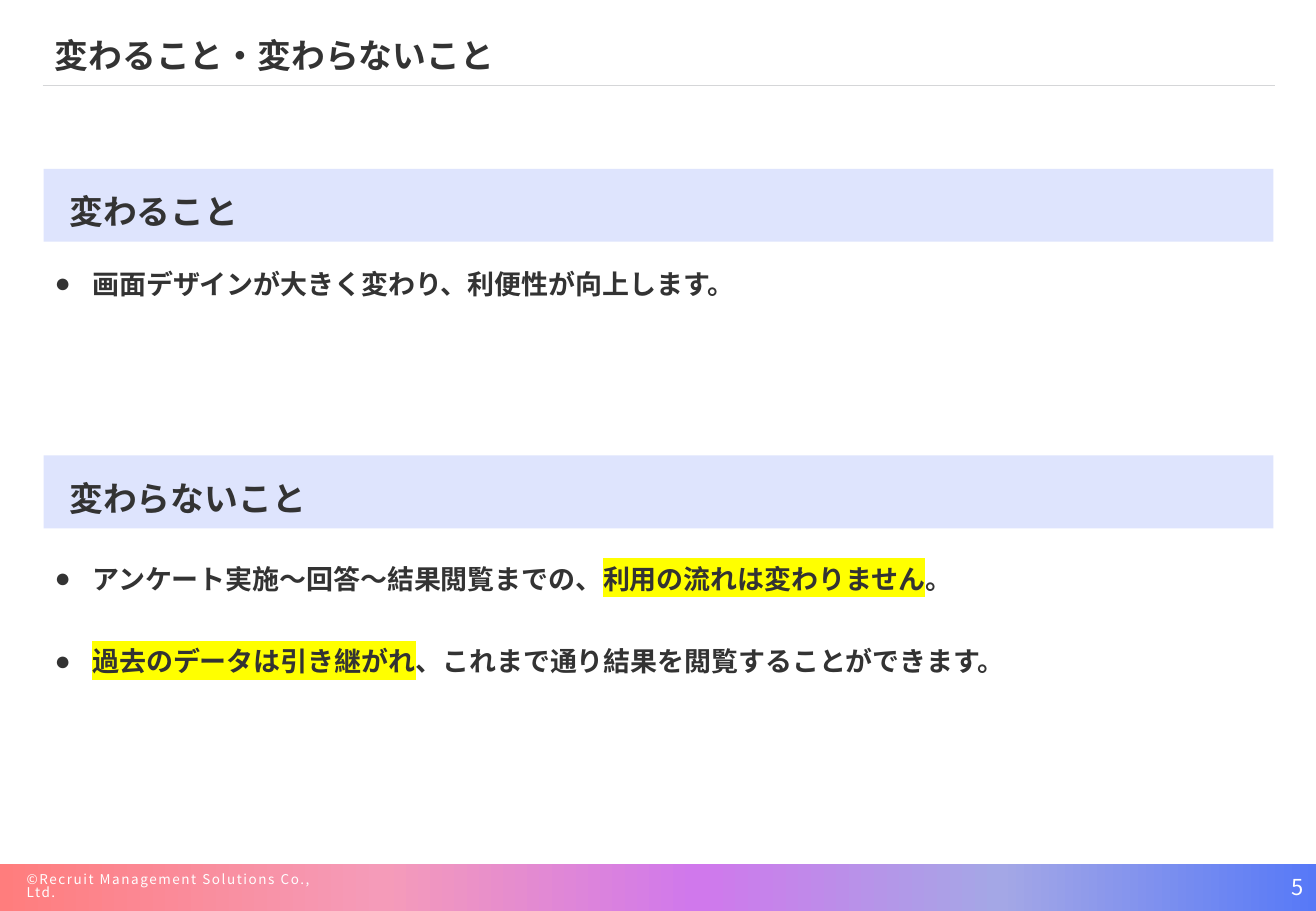
"""Build the slide that compares what changes with what stays the same."""
import lxml.etree
import pptx
import pptx.dml.color
import pptx.enum.shapes
import pptx.enum.text
import pptx.oxml.ns
import pptx.util

PX = 9144
RGB = pptx.dml.color.RGBColor
WHITE = RGB(0xFF, 0xFF, 0xFF)
INK = RGB(0x33, 0x33, 0x33)
RULE = RGB(0xD5, 0xD6, 0xD8)
BAND = RGB(0xDE, 0xE4, 0xFD)
MARKER = RGB(0xFF, 0xFF, 0x00)
BAR_STOPS = [
    (0, RGB(0xFF, 0x7D, 0x7D)),
    (29, RGB(0xF5, 0x9B, 0xB9)),
    (53, RGB(0xD0, 0x78, 0xEC)),
    (76, RGB(0xA4, 0xA7, 0xE6)),
    (100, RGB(0x57, 0x79, 0xF7)),
]
JP = "Noto Sans CJK JP"
SC = "Noto Sans CJK SC"
Pt = pptx.util.Pt
ANCHOR = pptx.enum.text.MSO_ANCHOR
ALIGN = pptx.enum.text.PP_ALIGN
AUTO = pptx.enum.text.MSO_AUTO_SIZE
SHAPE = pptx.enum.shapes.MSO_SHAPE

TITLE = {"name": SC, "size": Pt(20), "bold": True}
HEADING = {"name": JP, "size": Pt(20), "bold": True}
ITEM = {"name": JP, "size": Pt(16), "bold": True}
COPYRIGHT = {"name": SC, "size": Pt(8)}
NUMBER = {"name": SC, "size": Pt(13)}


def px(*lengths):
    """Turn px lengths into EMU."""
    return [pptx.util.Emu(length * PX) for length in lengths]


def apply(target, values):
    """Set attributes from a dict."""
    for name, value in values.items():
        setattr(target, name, value)


def add_xml(parent, tag, **attrs):
    """Append a drawing element."""
    return lxml.etree.SubElement(parent, pptx.oxml.ns.qn(tag), attrs)


def add_run(p, text, font, color, marked=False):
    """Add a formatted run, with a marker behind it if asked."""
    r = p.add_run()
    r.text = text
    apply(r.font, font)
    r.font.color.rgb = color
    rPr = r.font._element
    latin = rPr.find(pptx.oxml.ns.qn("a:latin"))
    latin.addnext(add_xml(rPr, "a:ea", typeface=font["name"]))
    if marked:
        highlight = add_xml(rPr, "a:highlight")
        add_xml(highlight, "a:srgbClr", val=str(MARKER))
        latin.addprevious(highlight)
    return r


def place(sp, box):
    """Move a shape to its px box."""
    apply(sp, dict(zip(("left", "top", "width", "height"), px(*box))))


def set_title(sp, box, text):
    """Fill the title placeholder."""
    place(sp, box)
    apply(sp.text_frame, {"vertical_anchor": ANCHOR.MIDDLE, "auto_size": AUTO.NONE})
    p = sp.text_frame.paragraphs[0]
    p.alignment = ALIGN.LEFT
    add_run(p, text, TITLE, INK)


def set_list(sp, box, items):
    """Fill a body placeholder with bulleted items of (text, marked) parts."""
    place(sp, box)
    tf = sp.text_frame
    apply(tf, {"vertical_anchor": ANCHOR.TOP, "auto_size": AUTO.SHAPE_TO_FIT_TEXT})
    for i, parts in enumerate(items):
        p = tf.add_paragraph() if i else tf.paragraphs[0]
        apply(p, {"line_spacing": 1.3, "space_before": Pt(24 if i else 0)})
        pPr = p._p.get_or_add_pPr()
        indent = 31 * PX
        pPr.set("marL", str(indent))
        pPr.set("indent", str(-indent))
        add_xml(pPr, "a:buFont", typeface="Arial")
        add_xml(pPr, "a:buChar", char="●")
        for text, marked in parts:
            add_run(p, text, ITEM, INK, marked)


def add_band(s, top, text):
    """Add a section heading band."""
    sp = s.shapes.add_shape(SHAPE.ROUNDED_RECTANGLE, *px(36, top, 1012, 60))
    sp.adjustments[0] = 0
    sp.shadow.inherit = False
    sp.fill.solid()
    sp.fill.fore_color.rgb = BAND
    sp.line.fill.background()
    inset, = px(21)
    apply(sp.text_frame, {"margin_left": inset, "margin_right": inset,
                          "vertical_anchor": ANCHOR.MIDDLE, "word_wrap": True})
    p = sp.text_frame.paragraphs[0]
    apply(p, {"alignment": ALIGN.LEFT, "line_spacing": 1.3})
    add_run(p, text, HEADING, INK)


def add_label(s, box, text, font, **paragraph):
    """Add a white footer label."""
    tf = s.shapes.add_textbox(*px(*box)).text_frame
    apply(tf, {"word_wrap": True, "vertical_anchor": ANCHOR.MIDDLE,
               "auto_size": AUTO.NONE})
    apply(tf.paragraphs[0], paragraph)
    return add_run(tf.paragraphs[0], text, font, WHITE)


def add_gradient_bar(s, box):
    """Add the footer bar with its colour stops."""
    sp = s.shapes.add_shape(SHAPE.RECTANGLE, *px(*box))
    sp.shadow.inherit = False
    sp.line.fill.background()
    sp.fill.gradient()
    sp.fill.gradient_angle = 0
    stops = next(sp._element.iter(pptx.oxml.ns.qn("a:gsLst")))
    for stop in list(stops):
        stops.remove(stop)
    for percent, color in BAR_STOPS:
        stop = add_xml(stops, "a:gs", pos=str(percent * 1000))
        add_xml(stop, "a:srgbClr", val=str(color))


def add_rule(s, left, right, y):
    """Add a thin horizontal line."""
    kind = pptx.enum.shapes.MSO_CONNECTOR.STRAIGHT
    line = s.shapes.add_connector(kind, *px(left, y, right, y))
    line.line.color.rgb = RULE
    line.line.width = Pt(0.5)
    add_xml(line._element.spPr, "a:effectLst")


def main():
    """Build and save the slide."""
    prs = pptx.Presentation()
    prs.slide_width, prs.slide_height = px(1083, 750)
    s = prs.slides.add_slide(prs.slide_layouts[3])
    title, changes, constants = s.placeholders

    add_gradient_bar(s, (0, 711, 1083, 39))
    add_rule(s, 35, 1049, 70)
    r = add_label(s, (12, 718, 269, 24), "©Recruit Management Solutions Co., Ltd.",
                  COPYRIGHT, line_spacing=0.82)
    r.font._element.set("spc", "90")
    add_label(s, (839, 710, 244, 40), "5", NUMBER, alignment=ALIGN.RIGHT)

    set_title(title, (35, 15, 934, 60), "変わること・変わらないこと")
    add_band(s, 139, "変わること")
    set_list(changes, (35, 207, 991, 43), [
        [("画面デザインが大きく変わり、利便性が向上します。", False)],
    ])
    add_band(s, 375, "変わらないこと")
    set_list(constants, (35, 450, 991, 111), [
        [("アンケート実施～回答～結果閲覧までの、", False),
         ("利用の流れは変わりません", True), ("。", False)],
        [("過去のデータは引き継がれ", True),
         ("、これまで通り結果を閲覧することができます。", False)],
    ])
    prs.save("out.pptx")


if __name__ == "__main__":
    main()
